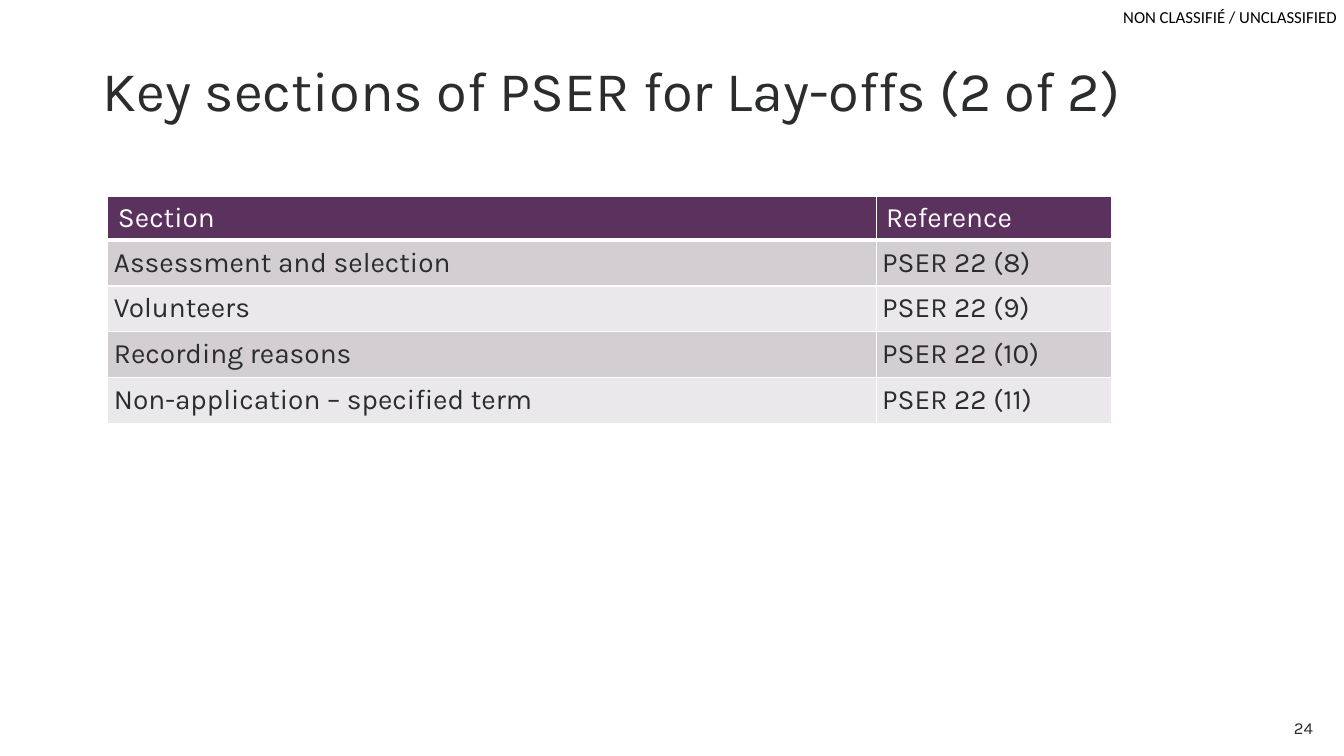
from lxml import etree
from pptx import Presentation
from pptx import util as u
from pptx.dml.color import RGBColor
from pptx.enum import text
from pptx.oxml import ns

COLORS = {
    "ink": "2A2C2D",
    "black": "000000",
    "white": "FFFFFF",
    "header": "5B315E",
    "band_dark": "D2CED2",
    "band_light": "EAE8EA",
}


def write(frame, words, size=20, font="Karla", color="ink", align=text.PP_ALIGN.LEFT,
          anchor=text.MSO_ANCHOR.MIDDLE, line_spacing=None, space_after=None):
    frame.word_wrap = True
    frame.vertical_anchor = anchor
    paragraph = frame.paragraphs[0]
    paragraph.alignment = align
    paragraph.line_spacing = line_spacing
    paragraph.space_after = space_after
    run = paragraph.add_run()
    run.text = words
    run.font.size = u.Pt(size)
    run.font.name = font
    run.font.bold = False
    run.font.color.rgb = RGBColor.from_string(COLORS[color])


def add_border(cell, side, width):
    line = etree.SubElement(cell._tc.get_or_add_tcPr(), ns.qn(f"a:ln{side}"), w=str(u.Pt(width)))
    fill = etree.SubElement(line, ns.qn("a:solidFill"))
    etree.SubElement(fill, ns.qn("a:srgbClr"), val=COLORS["white"])


presentation = Presentation()
presentation.slide_width = u.Inches(13.33)
presentation.slide_height = u.Inches(7.5)
slide = presentation.slides.add_slide(presentation.slide_layouts[6])

# Classification marking
marking = slide.shapes.add_textbox(u.Inches(11.14), u.Inches(0.07), u.Inches(2.16), u.Inches(0.2))
frame = marking.text_frame
frame.margin_left = frame.margin_top = frame.margin_right = frame.margin_bottom = 0
write(frame, "NON CLASSIFIÉ / UNCLASSIFIED", size=12, font="Calibri", color="black",
      anchor=text.MSO_ANCHOR.TOP)
frame.word_wrap = False

# Title
title = slide.shapes.add_textbox(u.Inches(0.92), u.Inches(0.19), u.Inches(11.5), u.Inches(1.47))
write(title.text_frame, "Key sections of PSER for Lay-offs (2 of 2)", size=40, line_spacing=0.9)

# Table of sections and references
ROWS = [
    ("Section", "Reference"),
    ("Assessment and selection", "PSER 22 (8)"),
    ("Volunteers", "PSER 22 (9)"),
    ("Recording reasons", "PSER 22 (10)"),
    ("Non-application – specified term", "PSER 22 (11)"),
]
table = slide.shapes.add_table(len(ROWS), 2, u.Inches(1.07), u.Inches(1.95),
                               u.Inches(9.96), u.Inches(2.18)).table
table.horz_banding = False
for column, width in zip(table.columns, (7.62, 2.34)):
    column.width = u.Inches(width)

for row_index, row in enumerate(ROWS):
    is_header = row_index == 0
    table.rows[row_index].height = u.Inches(0.42 if is_header else 0.44)
    band = "header" if is_header else ("band_light", "band_dark")[row_index % 2]
    for column_index, words in enumerate(row):
        cell = table.cell(row_index, column_index)
        if not is_header:
            cell.margin_left = cell.margin_right = u.Inches(0.06)
            cell.margin_top = cell.margin_bottom = u.Inches(0.06)
        # A thick rule separates the header from the body
        widths = {"L": 1, "R": 1, "T": 3 if row_index == 1 else 1, "B": 3 if is_header else 1}
        for side, width in widths.items():
            add_border(cell, side, width)
        cell.fill.solid()
        cell.fill.fore_color.rgb = RGBColor.from_string(COLORS[band])
        write(cell.text_frame, words, color="white" if is_header else "ink",
              anchor=None, space_after=None if is_header else u.Pt(8))

# Slide number
number = slide.shapes.add_textbox(u.Inches(11.81), u.Inches(7.02), u.Inches(1.31), u.Inches(0.4))
write(number.text_frame, "24", size=12, align=text.PP_ALIGN.RIGHT)

presentation.save("out.pptx")
